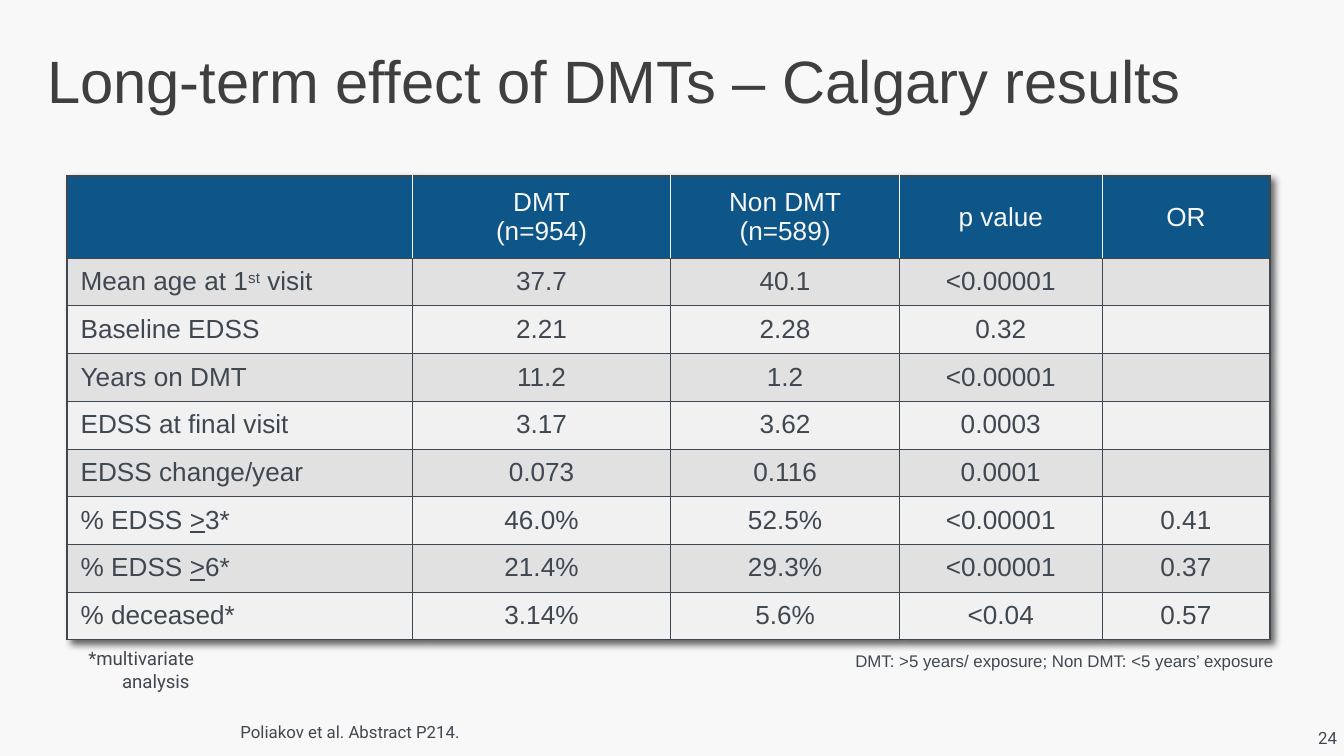
from dataclasses import dataclass, field

from lxml import etree
from pptx import Presentation
from pptx import util as u
from pptx.dml.color import RGBColor
from pptx.enum import text
from pptx.oxml.ns import qn

PX = u.Inches(1) // 200  # one px is 1/200 inch

INK = RGBColor(0x3F, 0x47, 0x51)
TITLE = RGBColor(0x3F, 0x3F, 0x3F)
PAPER = RGBColor(0xF8, 0xF8, 0xF8)
HEADER = RGBColor(0x0E, 0x55, 0x88)
BANDS = (RGBColor(0xE1, 0xE1, 0xE2), RGBColor(0xF1, 0xF1, 0xF1))

LEFT, CENTER, RIGHT = (text.PP_ALIGN.LEFT, text.PP_ALIGN.CENTER,
                       text.PP_ALIGN.RIGHT)
TOP, MIDDLE, BOTTOM = (text.MSO_ANCHOR.TOP, text.MSO_ANCHOR.MIDDLE,
                       text.MSO_ANCHOR.BOTTOM)


@dataclass(frozen=True)
class Run:
    text: str
    baseline: int = 0
    underline: bool = False


@dataclass(frozen=True)
class Format:
    size: int
    name: str = "Arial"
    color: RGBColor = INK


@dataclass(frozen=True)
class Note:
    text: str
    box: tuple[int, int, int, int]
    fmt: Format
    align: text.PP_ALIGN = LEFT
    hanging: int = 0
    frame: dict = field(default_factory=dict)


def add_run(p, run: Run, fmt: Format) -> None:
    r = p.add_run()
    r.text = run.text
    values = {"size": u.Pt(fmt.size), "name": fmt.name, "bold": False,
              "underline": run.underline}
    for key, value in values.items():
        setattr(r.font, key, value)
    r.font.color.rgb = fmt.color
    if run.baseline:
        r.font._element.set("baseline", str(run.baseline * 1000))


def set_frame(tf, values: dict) -> None:
    for key, value in values.items():
        setattr(tf, key, value * PX if key.startswith("margin") else value)


def add_note(s, note: Note) -> None:
    tf = s.shapes.add_textbox(*(v * PX for v in note.box)).text_frame
    set_frame(tf, {"word_wrap": True, **note.frame})
    p = tf.paragraphs[0]
    p.alignment = note.align
    if note.hanging:
        pPr = p._p.get_or_add_pPr()
        pPr.set("marL", str(note.hanging * PX))
        pPr.set("indent", str(-note.hanging * PX))
    add_run(p, Run(note.text), note.fmt)


def set_border(cell, side: str, color: RGBColor, width: float) -> None:
    ln = etree.SubElement(cell._tc.get_or_add_tcPr(), qn(f"a:ln{side}"),
                          w=str(u.Pt(width)))
    fill = etree.SubElement(ln, qn("a:solidFill"))
    etree.SubElement(fill, qn("a:srgbClr"), val=str(color))


def fill_cell(cell, lines: list, align: text.PP_ALIGN, fmt: Format) -> None:
    cell.vertical_anchor = MIDDLE
    tf = cell.text_frame
    if not lines:
        # keeps an empty cell from stretching its row
        cell.margin_top = cell.margin_bottom = 0
        etree.SubElement(tf.paragraphs[0]._p, qn("a:endParaRPr"),
                         sz=str(fmt.size * 100))
    for i, runs in enumerate(lines):
        p = tf.add_paragraph() if i else tf.paragraphs[0]
        p.alignment = align
        for run in runs:
            add_run(p, run, fmt)


def add_shadow(table) -> None:
    effects = etree.Element(qn("a:effectLst"))
    shadow = etree.SubElement(effects, qn("a:outerShdw"), blurRad="50800",
                              dist="38100", dir="2700000", algn="tl",
                              rotWithShape="0")
    color = etree.SubElement(shadow, qn("a:prstClr"), val="black")
    etree.SubElement(color, qn("a:alpha"), val="60000")
    table._tbl.tblPr.insert(0, effects)


def add_results(s, rows: list, widths: list[int], heights: list[int]) -> None:
    table = s.shapes.add_table(len(rows), len(widths), 100 * PX, 262 * PX,
                               sum(widths) * PX, sum(heights) * PX).table
    for col, width in zip(table.columns, widths):
        col.width = width * PX
    for row, height in zip(table.rows, heights):
        row.height = height * PX
    last_row, last_col = len(rows) - 1, len(widths) - 1

    for i, row in enumerate(rows):
        for j, content in enumerate(row):
            cell = table.cell(i, j)
            if isinstance(content, str):
                content = [[Run(line)] for line in content.splitlines()]
            fill_cell(cell, content, CENTER if j else LEFT,
                      Format(14, color=INK if i else PAPER))
            # outer edges are heavier; header dividers are light
            inner = INK if i else PAPER
            edges = {"L": (j == 0, inner), "R": (j == last_col, inner),
                     "T": (i == 0, INK), "B": (i == last_row, INK)}
            for side, (outer, color) in edges.items():
                set_border(cell, side, INK if outer else color,
                           1 if outer else 0.25)
            cell.fill.solid()
            cell.fill.fore_color.rgb = BANDS[(i - 1) % 2] if i else HEADER
    add_shadow(table)


def at_least(level: int) -> list:
    return [[Run("% EDSS "), Run(">", underline=True), Run(f"{level}*")]]


ROWS = [
    ("", "DMT\n(n=954)", "Non DMT\n(n=589)", "p value", "OR"),
    ([[Run("Mean age at 1"), Run("st", baseline=30), Run(" visit")]],
     "37.7", "40.1", "<0.00001", ""),
    ("Baseline EDSS", "2.21", "2.28", "0.32", ""),
    ("Years on DMT", "11.2", "1.2", "<0.00001", ""),
    ("EDSS at final visit", "3.17", "3.62", "0.0003", ""),
    ("EDSS change/year", "0.073", "0.116", "0.0001", ""),
    (at_least(3), "46.0%", "52.5%", "<0.00001", "0.41"),
    (at_least(6), "21.4%", "29.3%", "<0.00001", "0.37"),
    ("% deceased*", "3.14%", "5.6%", "<0.04", "0.57"),
]

NOTES = [
    Note("24", (1942, 1070, 58, 46), Format(9, "Roboto"),
         frame={"vertical_anchor": MIDDLE, "margin_right": 0,
                "margin_bottom": 0}),
    Note("Poliakov et al. Abstract P214.", (338, 1064, 1316, 50),
         Format(9, "Roboto"), hanging=50, frame={"vertical_anchor": BOTTOM}),
    Note("DMT: >5 years/ exposure; Non DMT: <5 years’ exposure",
         (1016, 958, 898, 50), Format(9), RIGHT),
    Note("*multivariate analysis", (112, 953, 300, 54), Format(10, "Roboto"),
         hanging=50, frame={"vertical_anchor": TOP}),
]


def main() -> None:
    prs = Presentation()
    prs.slide_width, prs.slide_height = 2000 * PX, 1125 * PX
    s = prs.slides.add_slide(prs.slide_layouts[5])
    s.background.fill.solid()
    s.background.fill.fore_color.rgb = PAPER

    # Title
    sp = s.shapes.title
    sp.left, sp.top, sp.width, sp.height = (v * PX for v in (50, 24, 1900, 188))
    tf = sp.text_frame
    set_frame(tf, {"vertical_anchor": MIDDLE, "margin_left": 20,
                   "margin_right": 10, "word_wrap": True,
                   "auto_size": text.MSO_AUTO_SIZE.NONE})
    tf.paragraphs[0].alignment = LEFT
    add_run(tf.paragraphs[0], Run("Long-term effect of DMTs – Calgary results"),
            Format(32, color=TITLE))

    # Results table
    add_results(s, ROWS, [514, 384, 341, 301, 250], [122] + [71] * 8)

    # Page number, citation and footnotes
    for note in NOTES:
        add_note(s, note)
    prs.save("out.pptx")


if __name__ == "__main__":
    main()
